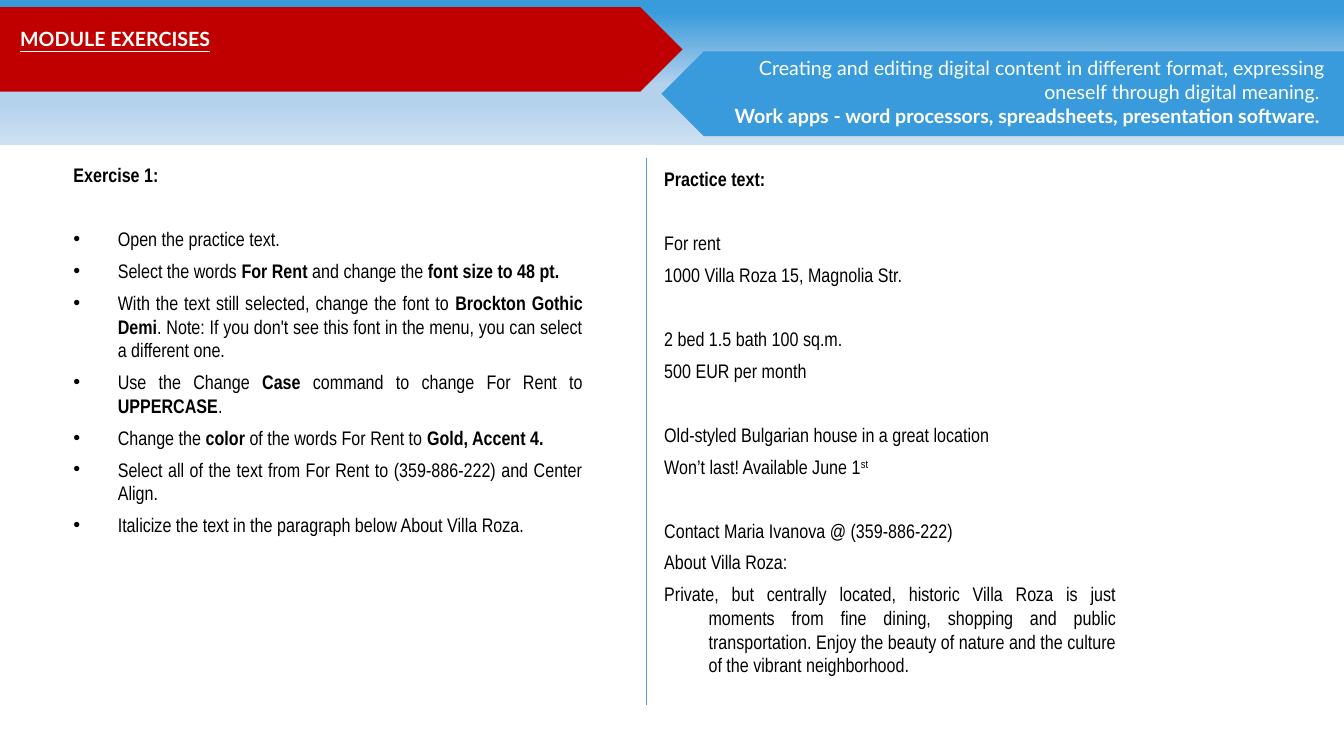
"""Build the module exercises slide with its banner and two text columns."""
from pptx import Presentation
from pptx.dml.color import RGBColor
from pptx.enum.shapes import MSO_CONNECTOR, MSO_SHAPE
from pptx.enum.text import MSO_ANCHOR, PP_ALIGN
from pptx.oxml import parse_xml
from pptx.oxml.ns import nsdecls
from pptx.util import Inches, Pt

RED, BLUE, WHITE, BLACK = "C00000", "3A9BDC", "FFFFFF", "000000"
STOPS = [(9, BLUE), (59, "B5D2EC"), (72, "B5D2EC"), (100, "CEE1F2")]
BLANK = 22.8

TASKS = [
    [("Open the practice text.", False)],
    [("Select the words ", False), ("For Rent ", True),
     ("and change the ", False), ("font size to 48 pt.", True)],
    [("With the text still selected, change the font to ", False),
     ("Brockton Gothic Demi", True),
     (". Note: If you don't see this font in the menu, "
      "you can select a different one.", False)],
    [("Use the Change ", False), ("Case", True),
     (" command to change For Rent to ", False),
     ("UPPERCASE", True), (".", False)],
    [("Change the ", False), ("color", True),
     (" of the words For Rent to ", False), ("Gold, Accent 4.", True)],
    [("Select all of the text from For Rent to (359-886-222) "
      "and Center Align.", False)],
    [("Italicize the text in the paragraph below About Villa Roza.", False)],
]

ADVERT = [
    ["For rent", "1000 Villa Roza 15, Magnolia Str."],
    ["2 bed 1.5 bath 100 sq.m.", "500 EUR per month"],
    ["Old-styled Bulgarian house in a great location",
     "Won’t last! Available June 1"],
    ["Contact Maria Ivanova @ (359-886-222)", "About Villa Roza:",
     "Private, but centrally located, historic Villa Roza is just moments "
     "from fine dining, shopping and public transportation. Enjoy the beauty "
     "of nature and the culture of the vibrant neighborhood."],
]


def color(code):
    return RGBColor.from_string(code)


def add_block(slide, kind, left, top, width, height, fill=None):
    block = slide.shapes.add_shape(
        kind, Inches(left), Inches(top), Inches(width), Inches(height))
    block.shadow.inherit = False
    block.line.fill.background()
    if fill:
        block.fill.solid()
        block.fill.fore_color.rgb = color(fill)
    return block


def add_band(slide):
    band = add_block(slide, MSO_SHAPE.RECTANGLE, 0, 0, 13.33, 1.44)
    stops = "".join(
        f'<a:gs pos="{pos * 1000}"><a:srgbClr val="{code}"/></a:gs>'
        for pos, code in STOPS)
    band._element.spPr.insert(2, parse_xml(
        f'<a:gradFill {nsdecls("a")}><a:gsLst>{stops}</a:gsLst>'
        '<a:lin ang="5400000" scaled="0"/></a:gradFill>'))


def add_box(slide, left, top, width, height):
    box = slide.shapes.add_textbox(
        Inches(left), Inches(top), Inches(width), Inches(height))
    box.text_frame.word_wrap = True
    return box.text_frame


def add_run(para, text, bold=False, face="Arial Narrow", ink=BLACK):
    run = para.add_run()
    run.text = text
    run.font.name, run.font.size, run.font.bold = face, Pt(14), bold
    run.font.color.rgb = color(ink)
    return run


def next_para(frame):
    para = frame.paragraphs[0]
    return frame.add_paragraph() if para.runs else para


def add_para(frame, parts, before=0, bullet=False):
    para = next_para(frame)
    para.alignment = PP_ALIGN.JUSTIFY
    props = para._p.get_or_add_pPr()
    props.set("marL", str(Inches(0.5)))
    props.set("indent", str(Inches(-0.44)))
    if bullet:
        for tag in (f'<a:buClr {nsdecls("a")}><a:srgbClr val="{BLACK}"/></a:buClr>',
                    f'<a:buFont {nsdecls("a")} typeface="Arial"/>',
                    f'<a:buChar {nsdecls("a")} char="•"/>'):
            props.append(parse_xml(tag))
    para.space_before, para.space_after = Pt(before), Pt(6)
    for text, bold in parts:
        add_run(para, text, bold)
    return para


def set_title(slide, text):
    title = slide.shapes.title
    title.left, title.top = Inches(0.1), Inches(0.22)
    title.width, title.height = Inches(6.46), Inches(0.34)
    title.text_frame.vertical_anchor = MSO_ANCHOR.TOP
    para = title.text_frame.paragraphs[0]
    para.alignment = PP_ALIGN.LEFT
    add_run(para, text, True, "Lato", WHITE).font.underline = True
    slide.shapes._spTree.append(title._element)


def add_topic(slide):
    frame = add_box(slide, 6.94, 0.51, 6.3, 0.81)
    for text, bold in (
            ("Creating and editing digital content in different format, "
             "expressing oneself through digital meaning. ", False),
            ("Work apps - word processors, spreadsheets, "
             "presentation software. ", True)):
        para = next_para(frame)
        para.alignment = PP_ALIGN.RIGHT
        add_run(para, text, bold, "Lato", WHITE)


def add_tasks(slide):
    frame = add_box(slide, 0.57, 1.57, 5.31, 5.08)
    add_para(frame, [("Exercise 1:", True)])
    for i, parts in enumerate(TASKS):
        add_para(frame, parts, 0 if i else BLANK, bullet=True)


def add_advert(slide):
    frame = add_box(slide, 6.43, 1.61, 4.74, 5.34)
    add_para(frame, [("Practice text:", True)])
    for group in ADVERT:
        for i, text in enumerate(group):
            para = add_para(frame, [(text, False)], 0 if i else BLANK)
            if text.endswith("June 1"):
                raised = add_run(para, "st ")
                raised.font._element.set("baseline", "30000")


def add_rule(slide):
    rule = slide.shapes.add_connector(
        MSO_CONNECTOR.STRAIGHT, Inches(6.41), Inches(1.57),
        Inches(6.41), Inches(6.99))
    rule.line.color.rgb = color("5698D3")
    rule.line.width = Pt(0.75)
    rule._element.spPr.append(parse_xml(f'<a:effectLst {nsdecls("a")}/>'))


def main():
    deck = Presentation()
    deck.slide_width, deck.slide_height = Inches(13.33), Inches(7.5)
    slide = deck.slides.add_slide(deck.slide_layouts[5])
    add_band(slide)
    add_block(slide, MSO_SHAPE.PENTAGON, 0, 0.07, 6.77, 0.84, RED)
    set_title(slide, "MODULE EXERCISES")
    add_tasks(slide)
    arrow = add_block(slide, MSO_SHAPE.PENTAGON, 6.56, 0.51, 6.77, 0.84, BLUE)
    arrow.rotation = 180
    add_topic(slide)
    add_advert(slide)
    add_rule(slide)
    deck.save("out.pptx")


if __name__ == "__main__":
    main()
